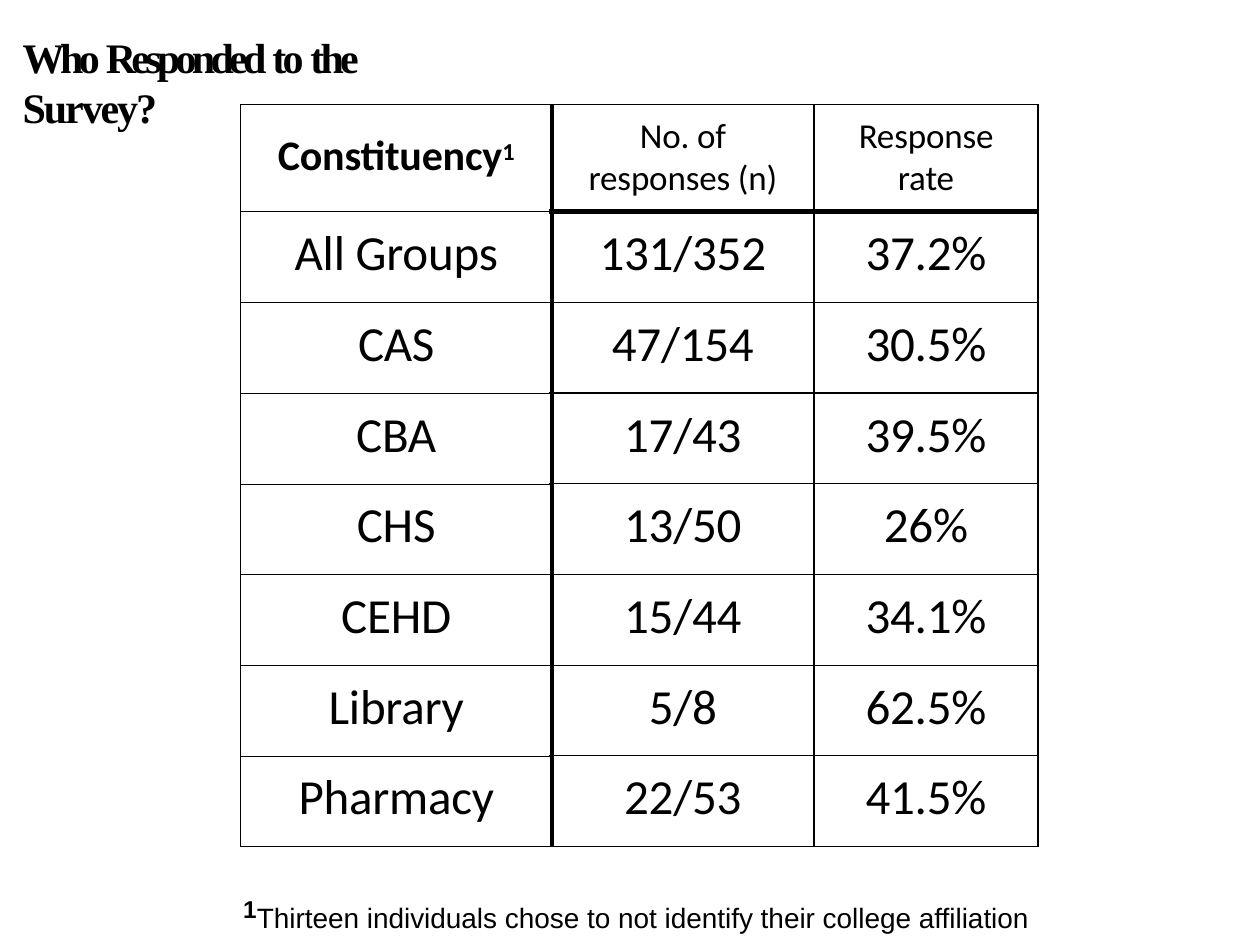
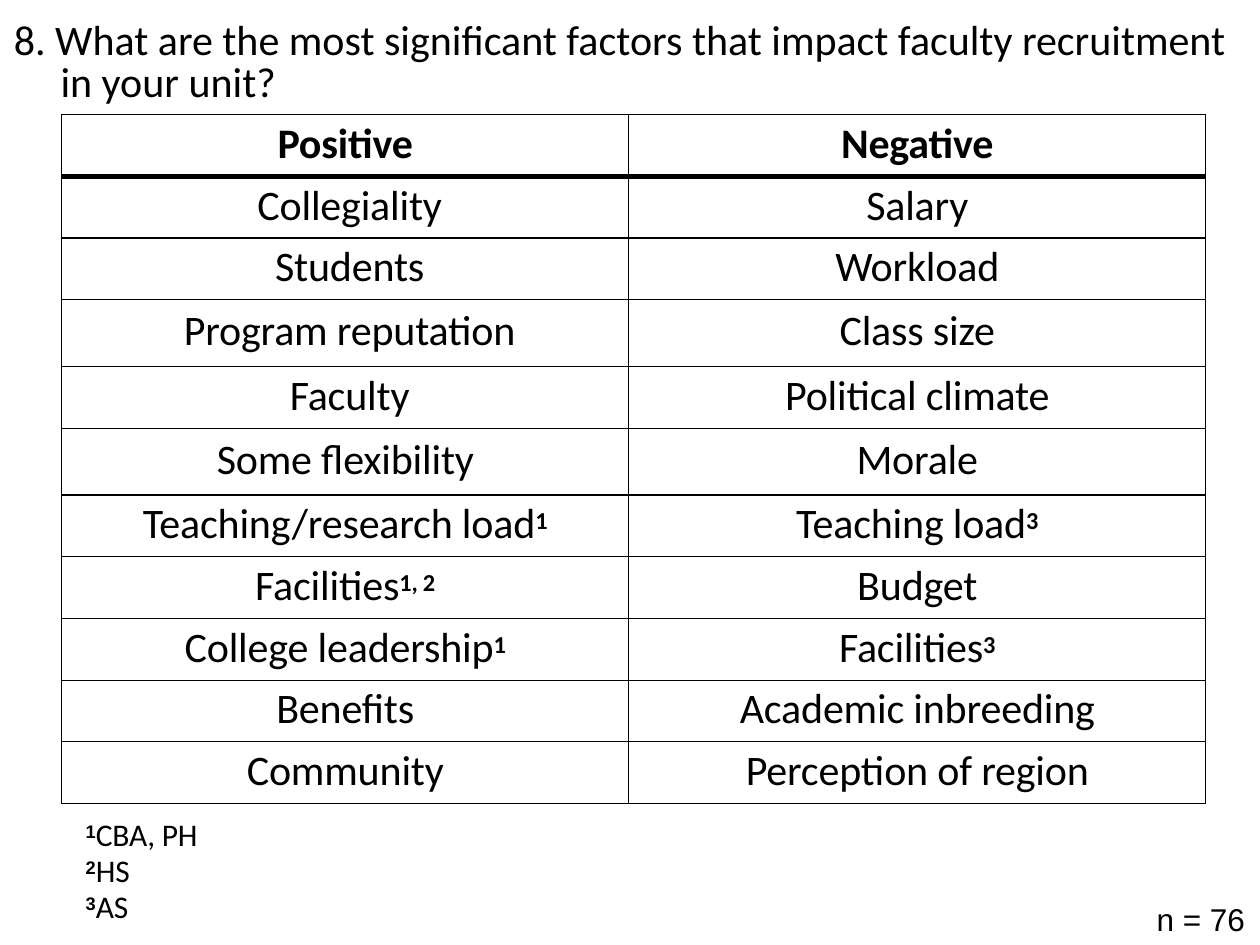
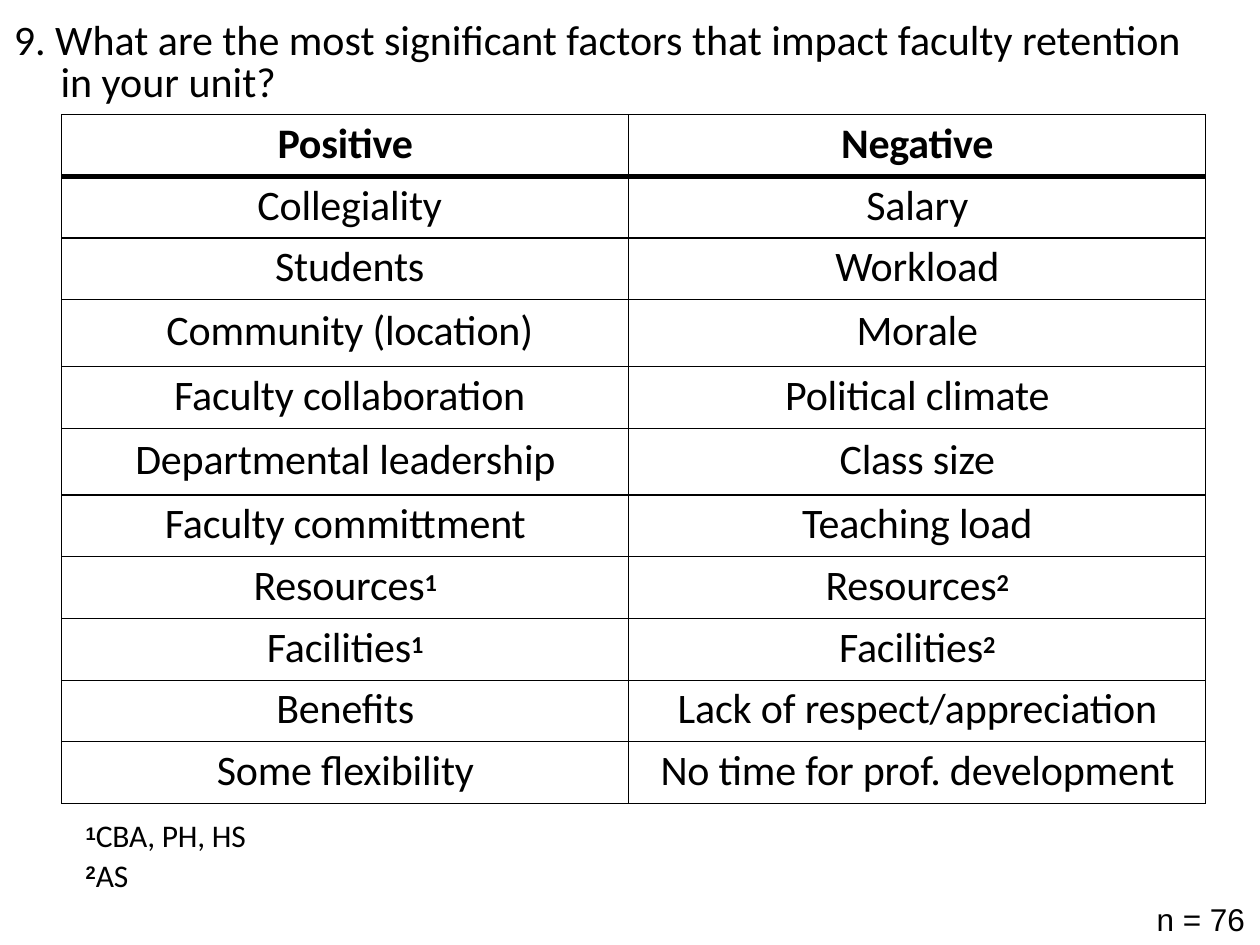
"""Builds three slides of faculty survey results."""
from lxml import etree
from pptx import Presentation
from pptx.dml.color import RGBColor
from pptx.enum.text import MSO_ANCHOR, MSO_AUTO_SIZE, PP_ALIGN
from pptx.oxml.ns import qn
from pptx.util import Inches, Pt

LEFT, CENTER = PP_ALIGN.LEFT, PP_ALIGN.CENTER
TOP = MSO_ANCHOR.TOP
NO_AUTOFIT = MSO_AUTO_SIZE.NONE
BLACK = RGBColor(0x00, 0x00, 0x00)
SERIF, SANS, BODY = "Times New Roman", "Arial", "Calibri"
TIGHT = -0.1

SURVEY_TITLE = [("Who ", -2.6), ("Responded ", -2.7), ("to ", -2.1),
                ("the ", -2.2), ("Survey?", -1.2)]
RESPONSES = [
    ("Constituency^1", "No. of responses (n)", "Response rate"),
    ("All Groups", "131/352", "37.2%"),
    ("CAS", "47/154", "30.5%"),
    ("CBA", "17/43", "39.5%"),
    ("CHS", "13/50", "26%"),
    ("CEHD", "15/44", "34.1%"),
    ("Library", "5/8", "62.5%"),
    ("Pharmacy", "22/53", "41.5%"),
]
AFFILIATION_NOTE = "Thirteen individuals chose to not identify their college affiliation"

QUESTIONS = [
    {
        "question": "8. What are the most significant factors that impact "
                    "faculty recruitment in your unit?",
        "question_width": 9.66,
        "factors": [
            ("Positive", "Negative"),
            ("Collegiality", "Salary"),
            ("Students", "Workload"),
            ("Program reputation", "Class size"),
            ("Faculty", "Political climate"),
            ("Some flexibility", "Morale"),
            ("Teaching/research load^1", "Teaching load^3"),
            ("Facilities^1, 2", "Budget"),
            ("College leadership^1", "Facilities^3"),
            ("Benefits", "Academic inbreeding"),
            ("Community", "Perception of region"),
        ],
        "notes": ["^1^CBA, PH", "^2^HS", "^3^AS"],
        "notes_size": (0.99, 0.89),
        "notes_pitch": Pt(20.7),
    },
    {
        "question": "9. What are the most significant factors that impact "
                    "faculty retention in your unit?",
        "question_width": 9.4,
        "factors": [
            ("Positive", "Negative"),
            ("Collegiality", "Salary"),
            ("Students", "Workload"),
            ("Community (location)", "Morale"),
            ("Faculty collaboration", "Political climate"),
            ("Departmental leadership", "Class size"),
            ("Faculty committment", "Teaching load"),
            ("Resources^1", "Resources^2"),
            ("Facilities^1", "Facilities^2"),
            ("Benefits", "Lack of respect/appreciation"),
            ("Some flexibility", "No time for prof. development"),
        ],
        "notes": ["^1^CBA, PH, HS", "^2^AS"],
        "notes_size": (1.38, 0.64),
        "notes_pitch": None,
    },
]
SAMPLE = "n = 76"


def add_run(paragraph, text, size, font=BODY, bold=False, raised=0, spacing=0):
    run = paragraph.add_run()
    run.text = text
    run.font.name, run.font.size, run.font.bold = font, Pt(size), bold
    run.font.color.rgb = BLACK
    properties = run.font._element
    if raised:
        properties.set("baseline", str(raised * 1000))
    if spacing:
        properties.set("spc", str(round(spacing * 100)))


def add_marked(paragraph, text, size, raised, bold=False, mark_font=BODY):
    for index, piece in enumerate(text.split("^")):
        if piece and index % 2:
            add_run(paragraph, piece, size, mark_font, True, raised, TIGHT)
        elif piece:
            add_run(paragraph, piece, size, BODY, bold, spacing=TIGHT)


def set_indent(paragraph, left, first=0):
    properties = paragraph._p.get_or_add_pPr()
    properties.set("marL", str(Inches(left)))
    properties.set("indent", str(Inches(first)))


def prepare_frame(shape, top_inset):
    frame = shape.text_frame
    frame.word_wrap = True
    frame.auto_size = NO_AUTOFIT
    frame.vertical_anchor = TOP
    frame.margin_left = frame.margin_right = frame.margin_bottom = 0
    frame.margin_top = Inches(top_inset)
    return frame


def place_title(slide, left, top, width, height, top_inset, pitch):
    title = slide.shapes.title
    title.left, title.top = Inches(left), Inches(top)
    title.width, title.height = Inches(width), Inches(height)
    paragraph = prepare_frame(title, top_inset).paragraphs[0]
    paragraph.alignment = LEFT
    paragraph.line_spacing = Pt(pitch)
    return paragraph


def add_text_box(slide, left, top, width, height):
    box = slide.shapes.add_textbox(
        Inches(left), Inches(top), Inches(width), Inches(height))
    return prepare_frame(box, 0.01)


def add_grid(slide, left, top, widths, heights):
    grid = slide.shapes.add_table(
        len(heights), len(widths), Inches(left), Inches(top),
        Inches(sum(widths)), Inches(sum(heights))).table
    grid.first_row = grid.horz_banding = False
    for column, width in zip(grid.columns, widths):
        column.width = Inches(width)
    for row, height in zip(grid.rows, heights):
        row.height = Inches(height)
    return grid


def style_cell(cell, top_inset, borders, side_inset=0):
    cell.margin_left = cell.margin_right = Inches(side_inset)
    cell.margin_top, cell.margin_bottom = Inches(top_inset), 0
    cell.vertical_anchor = TOP
    properties = cell._tc.get_or_add_tcPr()
    for side, width in zip("LRTB", borders):
        line = etree.SubElement(properties, qn(f"a:ln{side}"), w=str(Pt(width)))
        fill = etree.SubElement(line, qn("a:solidFill"))
        etree.SubElement(fill, qn("a:srgbClr"), val=str(BLACK))
    cell.fill.background()
    paragraph = cell.text_frame.paragraphs[0]
    paragraph.alignment = CENTER
    return paragraph


def response_borders(row, column):
    last = len(RESPONSES) - 1
    if column == 0:
        return 1, 3, 0.25, 1 if row == last else 0.25
    return (3 if column == 1 else 1, 1,
            3 if row == 1 else 0.75, 3 if row == 0 else 0.75)


def build_responses(slide):
    title = place_title(slide, 0.17, 0.21, 3.64, 0.43, 0.04, 28.6)
    set_indent(title, 0.01)
    for word, spacing in SURVEY_TITLE:
        add_run(title, word, 24, SERIF, True, spacing=spacing)

    heights = [0.85] + [0.72] * (len(RESPONSES) - 1)
    grid = add_grid(slide, 1.91, 0.83, (2.47, 2.08, 1.78), heights)
    for row, record in enumerate(RESPONSES):
        for column, value in enumerate(record):
            key_heading = row == 0 and column == 0
            if row:
                size, inset, side = 28, 0.1, 0
            elif key_heading:
                size, inset, side = 24, 0.21, 0
            else:
                size, inset, side = 20, 0.08, 0.2
            paragraph = style_cell(grid.cell(row, column), inset,
                                   response_borders(row, column), side)
            add_marked(paragraph, value, size, 24, key_heading)

    note = add_text_box(slide, 1.89, 7.03, 6.35, 0.3).paragraphs[0]
    set_indent(note, 0.04)
    add_run(note, "1", 24, SANS, True, 24)
    add_run(note, AFFILIATION_NOTE, 16, SANS)


def build_question(slide, content):
    title = place_title(slide, 0.09, 0.07, content["question_width"], 0.76, 0.1, 24)
    set_indent(title, 0.39, -0.37)
    add_run(title, content["question"], 24)

    factors = content["factors"]
    heights = [0.53 if row in (3, 5) else 0.49 for row in range(len(factors))]
    grid = add_grid(slide, 0.49, 0.91, (4.5, 4.58), heights)
    for row, pair in enumerate(factors):
        borders = (0.75, 0.75, 3 if row == 1 else 0.75, 3 if row == 0 else 0.75)
        for column, factor in enumerate(pair):
            inset = 0.05 if row in (3, 5) else 0.03
            paragraph = style_cell(grid.cell(row, column), inset, borders)
            if column == 0 and 1 <= row <= 4:
                set_indent(paragraph, 0.07)
            add_marked(paragraph, factor, 24, 21, row == 0)

    sample = add_text_box(slide, 9.17, 7.13, 0.73, 0.33).paragraphs[0]
    set_indent(sample, 0.01)
    add_run(sample, SAMPLE, 18, SANS)

    notes = add_text_box(slide, 0.64, 6.47, *content["notes_size"])
    for index, note in enumerate(content["notes"]):
        paragraph = notes.add_paragraph() if index else notes.paragraphs[0]
        set_indent(paragraph, 0.04)
        if content["notes_pitch"]:
            paragraph.line_spacing = content["notes_pitch"]
        elif index:
            paragraph.space_before = Pt(1)
        add_marked(paragraph, note, 18, 25, mark_font=SANS)


def main():
    deck = Presentation()
    deck.slide_width, deck.slide_height = Inches(10), Inches(7.5)
    title_only = deck.slide_layouts[5]
    build_responses(deck.slides.add_slide(title_only))
    for content in QUESTIONS:
        build_question(deck.slides.add_slide(title_only), content)
    deck.save("out.pptx")


if __name__ == "__main__":
    main()
